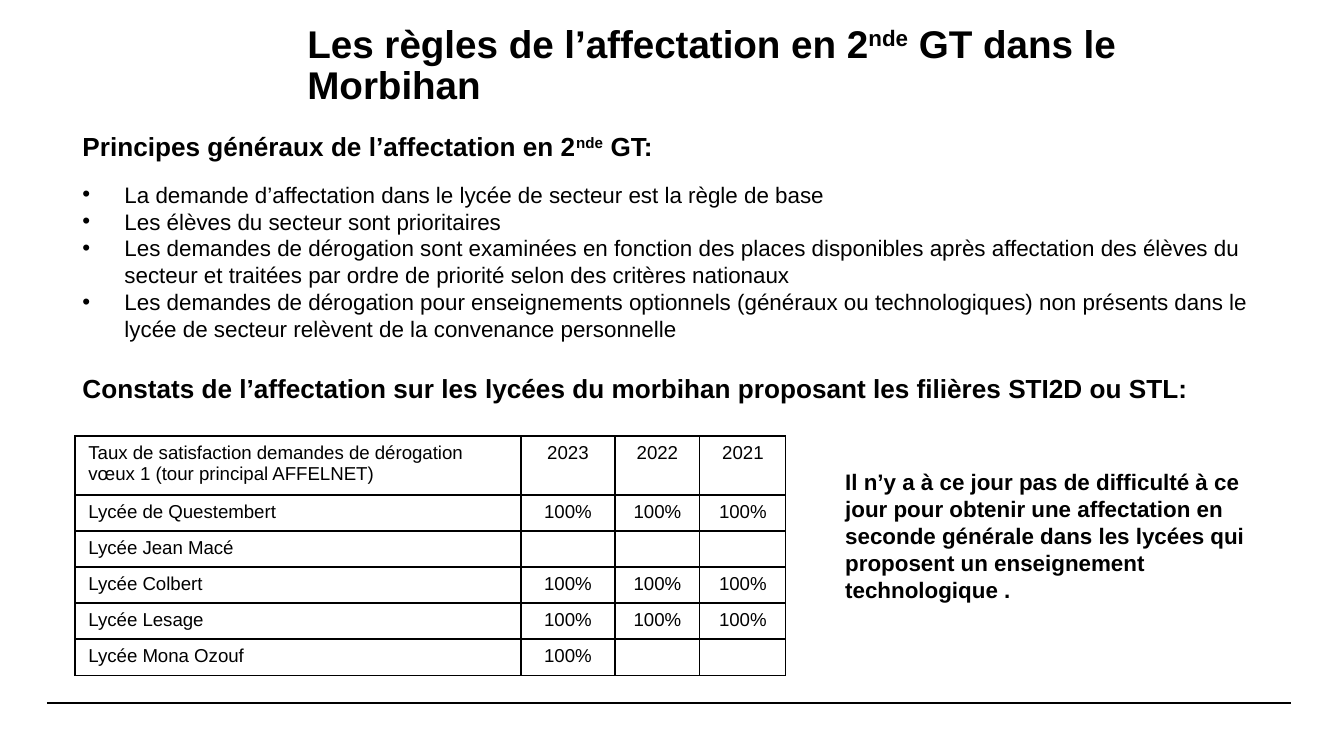
from dataclasses import dataclass
from typing import Optional

from lxml import etree
from pptx import Presentation, util as u
from pptx.dml.color import RGBColor
from pptx.enum import shapes, text
from pptx.oxml.ns import qn

PX = 914400 / 134.4  # EMU in one px


@dataclass(frozen=True)
class Theme:
    ink: RGBColor = RGBColor(0, 0, 0)
    font: str = "Arial"
    title: float = 20.7
    heading: float = 14
    body: float = 12
    cell: float = 10
    rule: float = 0.8
    border: float = 0.75


@dataclass(frozen=True)
class Box:
    left: int
    top: int
    width: int
    height: int

    def emu(self) -> tuple[int, ...]:
        return tuple(px(v) for v in (self.left, self.top, self.width, self.height))


@dataclass(frozen=True)
class Line:
    content: str
    size: float
    bold: bool = False
    bullet: bool = False
    before: float = 0


THEME = Theme()
BULLET_INDENT = 42

# Content; ^...^ marks superscript
TITLE = "Les règles de l’affectation en 2^nde^ GT dans le Morbihan"
RULES = [
    "La demande d’affectation dans le lycée de secteur est la règle de base",
    "Les élèves du secteur sont prioritaires",
    "Les demandes de dérogation sont examinées en fonction des places disponibles après "
    "affectation des élèves du secteur et traitées par ordre de priorité selon des critères nationaux",
    "Les demandes de dérogation pour enseignements optionnels (généraux ou technologiques) "
    "non présents dans le lycée de secteur relèvent de la convenance personnelle",
]
BODY = [
    Line("Principes généraux de l’affectation en 2^nde^ GT:", THEME.heading, bold=True),
    *(Line(rule, THEME.body, bullet=True, before=0 if i else 10) for i, rule in enumerate(RULES)),
    Line("Constats de l’affectation sur les lycées du morbihan proposant les filières STI2D ou STL:",
         THEME.heading, bold=True, before=16.5),
]
RATES = [
    ("Taux de satisfaction demandes de dérogation vœux 1 (tour principal AFFELNET)",
     "2023", "2022", "2021"),
    ("Lycée de Questembert", "100%", "100%", "100%"),
    ("Lycée Jean Macé", "", "", ""),
    ("Lycée Colbert", "100%", "100%", "100%"),
    ("Lycée Lesage", "100%", "100%", "100%"),
    ("Lycée Mona Ozouf", "100%", "", ""),
]
COLUMNS = [446, 94, 85, 86]
ROWS = [59] + [36] * 5
CONCLUSION = ("Il n’y a à ce jour pas de difficulté à ce jour pour obtenir une affectation en seconde "
              "générale dans les lycées qui proposent un enseignement technologique .")


def px(value: int) -> int:
    return round(value * PX)


def write(paragraph, content: str, *, size: float, bold: bool = False, bullet: bool = False,
          before: float = 0, spacing: float = 1.0, align=text.PP_ALIGN.LEFT) -> None:
    """Fill one paragraph; text between ^ marks is raised."""
    paragraph.alignment = align
    paragraph.space_before = u.Pt(before)
    paragraph.line_spacing = spacing
    props = paragraph._p.get_or_add_pPr()
    indent = px(BULLET_INDENT) if bullet else 0
    props.set("marL", str(indent))
    props.set("indent", str(-indent))
    if bullet:
        etree.SubElement(props, qn("a:buChar")).set("char", "•")
    else:
        etree.SubElement(props, qn("a:buNone"))
    for i, part in enumerate(content.split("^") if content else []):
        run = paragraph.add_run()
        run.text = part
        run.font.name, run.font.size, run.font.bold = THEME.font, u.Pt(size), bold
        run.font.color.rgb = THEME.ink
        if i % 2:
            run.font._element.set("baseline", "30000")
    if not content:
        etree.SubElement(paragraph._p, qn("a:endParaRPr")).set("sz", str(round(size * 100)))


def place(shape, box: Box, anchor):
    """Position a text shape and return its prepared frame."""
    shape.left, shape.top, shape.width, shape.height = box.emu()
    frame = shape.text_frame
    frame.word_wrap = True
    frame.auto_size = text.MSO_AUTO_SIZE.NONE
    frame.vertical_anchor = anchor
    return frame


def add_rule(slide, left: int, right: int, y: int) -> None:
    rule = slide.shapes.add_connector(
        shapes.MSO_CONNECTOR.STRAIGHT, px(left), px(y), px(right), px(y))
    rule.line.color.rgb = THEME.ink
    rule.line.width = u.Pt(THEME.rule)
    etree.SubElement(rule._element.spPr, qn("a:effectLst"))


def outline(cell) -> None:
    props = cell._tc.get_or_add_tcPr()
    for side in ("lnL", "lnR", "lnT", "lnB"):
        edge = etree.SubElement(props, qn(f"a:{side}"), w=str(u.Pt(THEME.border)))
        fill = etree.SubElement(edge, qn("a:solidFill"))
        etree.SubElement(fill, qn("a:srgbClr")).set("val", str(THEME.ink))
    cell.fill.background()


def add_rates(slide, left: int, top: int) -> None:
    box = Box(left, top, sum(COLUMNS), sum(ROWS))
    table = slide.shapes.add_table(len(ROWS), len(COLUMNS), *box.emu()).table
    table.first_row = table.horz_banding = False
    for column, width in zip(table.columns, COLUMNS):
        column.width = px(width)
    for r, (height, values) in enumerate(zip(ROWS, RATES)):
        table.rows[r].height = px(height)
        for c, value in enumerate(values):
            cell = table.cell(r, c)
            align: Optional[text.PP_ALIGN] = text.PP_ALIGN.CENTER if c else text.PP_ALIGN.LEFT
            write(cell.text_frame.paragraphs[0], value, size=THEME.cell, align=align)
            outline(cell)


def main() -> None:
    deck = Presentation()
    deck.slide_width, deck.slide_height = px(1344), px(756)
    slide = deck.slides.add_slide(deck.slide_layouts[1])

    # Footer rules
    for left in (47, 52):
        add_rule(slide, left, left + 1239, 703)

    # Title
    title = place(slide.shapes.title, Box(294, 27, 992, 79), text.MSO_ANCHOR.MIDDLE)
    write(title.paragraphs[0], TITLE, size=THEME.title, bold=True, spacing=0.9)

    # Principles and findings
    body = place(slide.placeholders[1], Box(69, 124, 1218, 574), text.MSO_ANCHOR.TOP)
    for i, line in enumerate(BODY):
        paragraph = body.add_paragraph() if i else body.paragraphs[0]
        write(paragraph, line.content, size=line.size, bold=line.bold,
              bullet=line.bullet, before=line.before)

    # Satisfaction rates
    add_rates(slide, 75, 436)

    # Conclusion
    note_box = Box(832, 462, 469, 149)
    note = place(slide.shapes.add_textbox(*note_box.emu()), note_box, text.MSO_ANCHOR.TOP)
    write(note.paragraphs[0], CONCLUSION, size=THEME.body, bold=True)

    deck.save("out.pptx")


if __name__ == "__main__":
    main()
